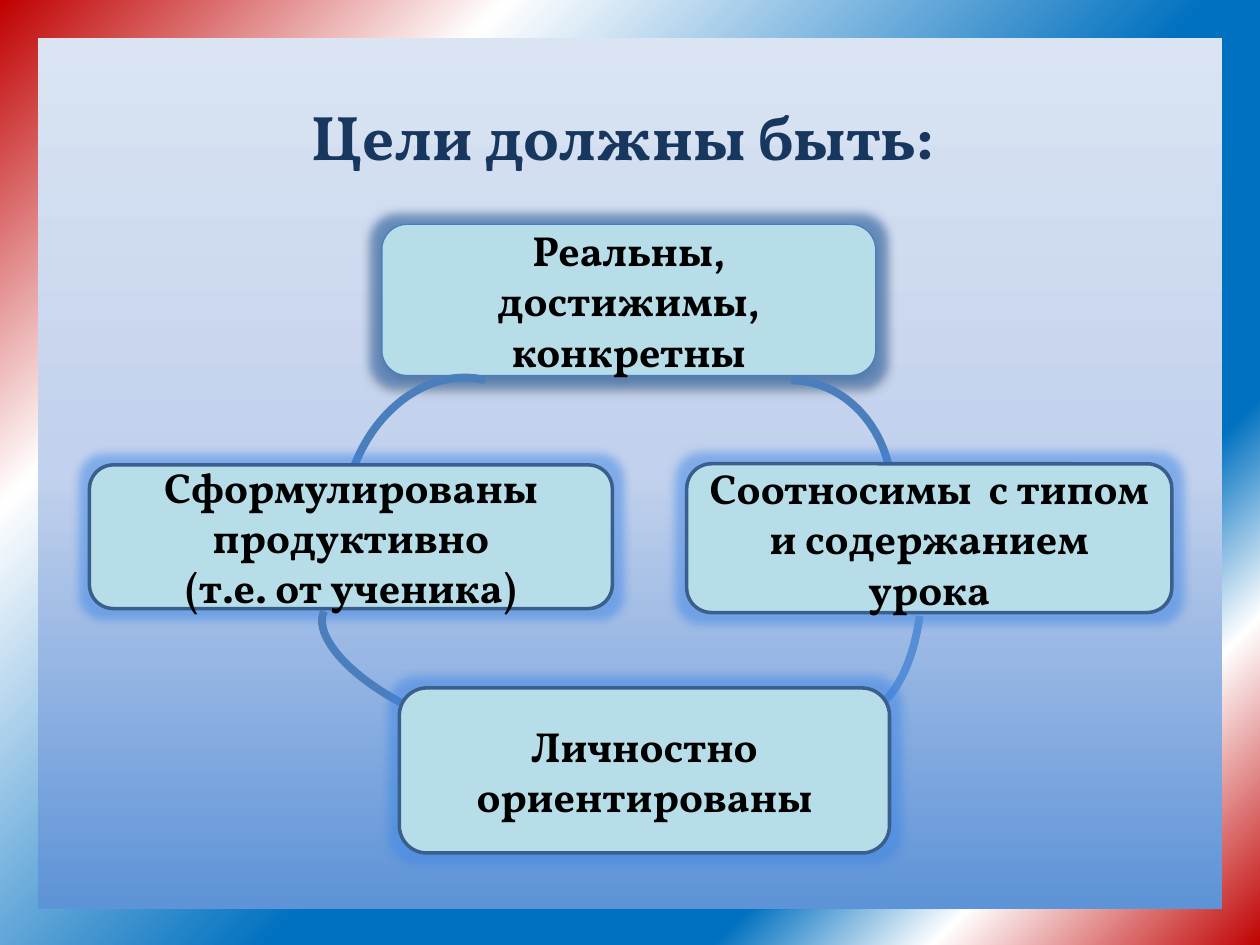
"""Build a slide with four requirements for lesson goals arranged in a ring."""
import lxml.etree
import pptx
import pptx.dml.color
import pptx.enum.shapes
import pptx.enum.text
import pptx.oxml.ns
import pptx.util

Pt = pptx.util.Pt
SHAPE = pptx.enum.shapes.MSO_SHAPE
ANCHOR = pptx.enum.text.MSO_ANCHOR
ALIGN = pptx.enum.text.PP_ALIGN
FONT = "Vollkorn"
COLORS = {
    "title": "17375E",
    "text": "000000",
    "box": "B7DEE8",
    "outline": "3A5F8C",
    "arc": "4B7EBC",
    "light_arc": "558ED5",
    "glow": "3C85E5",
    "shadow": "000000",
}
PAGE_STOPS = [(0, "DCE6F2"), (50, "C2D1ED"), (100, "558ED5")]
FRAME_STOPS = [(0, "C00000"), (23, "FFFFFF"), (55, "0070C0"),
               (75, "0070C0"), (85, "FFFFFF"), (100, "C00000")]


def rgb(name):
    return pptx.dml.color.RGBColor.from_string(COLORS[name])


def add_element(parent, tag, **attributes):
    element = lxml.etree.SubElement(parent, pptx.oxml.ns.qn(tag))
    for key, value in attributes.items():
        element.set(key, str(value))
    return element


def add_color(parent, name, alpha):
    color = add_element(parent, "a:srgbClr", val=COLORS[name])
    add_element(color, "a:alpha", val=alpha * 1000)


def set_gradient(fill, stops, angle):
    fill.gradient()
    fill.gradient_angle = -angle % 360
    stop_list = fill.gradient_stops[0]._gs.getparent()
    for stop in list(stop_list):
        stop_list.remove(stop)
    for position, color in stops:
        stop = add_element(stop_list, "a:gs", pos=position * 1000)
        add_element(stop, "a:srgbClr", val=color)


def set_font(paragraph, size, color):
    paragraph.font.name = FONT
    paragraph.font.size = Pt(size)
    paragraph.font.bold = True
    paragraph.font.color.rgb = rgb(color)


def add_shape(page, kind, left, top, width, height):
    shape = page.shapes.add_shape(kind, Pt(left), Pt(top), Pt(width), Pt(height))
    shape.shadow.inherit = False
    return shape


def add_frame(page):
    frame = add_shape(page, SHAPE.FRAME, 0, 0, 720, 541.5)
    frame.adjustments[0] = 0.04
    set_gradient(frame.fill, FRAME_STOPS, 45)
    frame.line.fill.background()


def set_title(page, text):
    title = page.shapes.title
    title.left, title.top, title.width, title.height = Pt(170.6), Pt(52), Pt(401), Pt(51)
    frame = title.text_frame
    frame.text = text
    frame.vertical_anchor = ANCHOR.TOP
    frame.auto_size = pptx.enum.text.MSO_AUTO_SIZE.NONE
    paragraph = frame.paragraphs[0]
    paragraph.alignment = ALIGN.LEFT
    set_font(paragraph, 36, "title")


def add_box(page, place, lines, outline="outline", weight=2,
            glow="glow", glow_alpha=50, shadow=False):
    box = add_shape(page, SHAPE.ROUNDED_RECTANGLE, *place)
    box.fill.solid()
    box.fill.fore_color.rgb = rgb("box")
    box.line.color.rgb = rgb(outline)
    box.line.width = Pt(weight)
    effects = box._element.spPr.find(pptx.oxml.ns.qn("a:effectLst"))
    add_color(add_element(effects, "a:glow", rad=Pt(11)), glow, glow_alpha)
    if shadow:
        drop = add_element(effects, "a:outerShdw", blurRad=Pt(3), dist=Pt(2),
                           dir=5400000, rotWithShape=0)
        add_color(drop, "shadow", 40)
    frame = box.text_frame
    frame.word_wrap = True
    frame.vertical_anchor = ANCHOR.MIDDLE
    frame.text = "\n".join(lines)
    for paragraph in frame.paragraphs:
        paragraph.alignment = ALIGN.CENTER
        set_font(paragraph, 24, "text")


def add_arc(page, place, rotation=0, color="arc", end=0):
    arc = add_shape(page, SHAPE.ARC, *place)
    arc.rotation = rotation
    arc.adjustments[1] = end
    arc.fill.background()
    arc.line.color.rgb = rgb(color)
    arc.line.width = Pt(4.5)


def main():
    deck = pptx.Presentation()
    deck.slide_width, deck.slide_height = Pt(720), Pt(540)
    page = deck.slides.add_slide(deck.slide_layouts[5])
    set_gradient(page.background.fill, PAGE_STOPS, 90)
    add_frame(page)
    set_title(page, "Цели должны быть:")
    add_box(page, (218.2, 128.2, 282.2, 86.4), ["Реальны, достижимы, конкретны"],
            outline="arc", weight=0.75, glow="arc", glow_alpha=65, shadow=True)
    add_arc(page, (394.6, 217.4, 115.2, 131.8), end=0.59)
    add_arc(page, (180.7, 231.1, 156.2, 123.8), rotation=283.6)
    add_box(page, (51.1, 265.7, 298.8, 82.1),
            ["Сформулированы продуктивно", "(т.е. от ученика)"])
    add_box(page, (392.4, 265, 277.2, 85),
            ["Соотносимы  с типом и содержанием урока"])
    add_arc(page, (438.5, 320.4, 118.1, 56.2), rotation=97.1, color="light_arc")
    add_arc(page, (178.6, 349.9, 144.7, 59), rotation=204.6)
    add_box(page, (228.2, 393.1, 280.1, 94.3), ["Личностно ориентированы"])
    deck.save("out.pptx")


if __name__ == "__main__":
    main()
